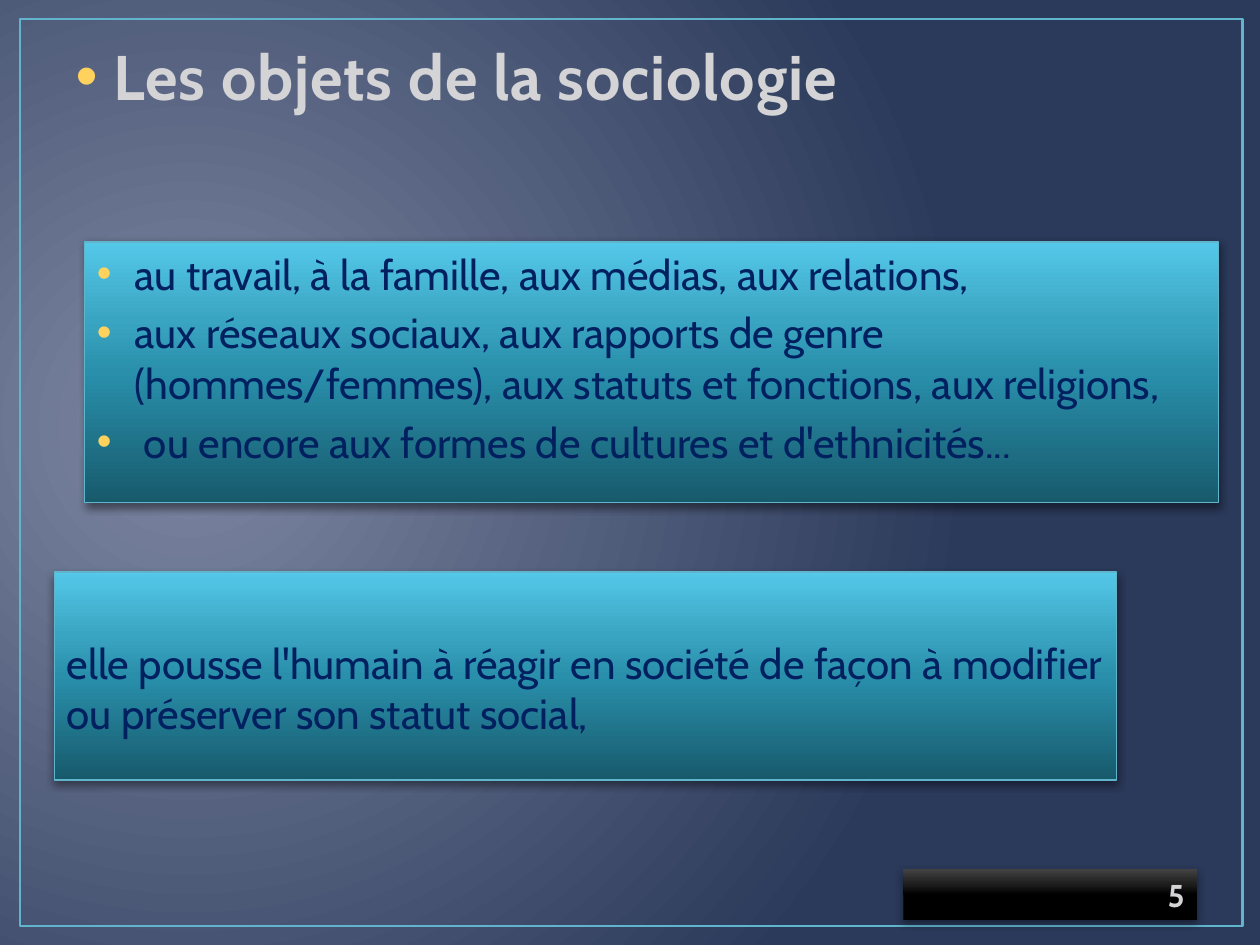
from lxml.etree import SubElement
from pptx import Presentation
from pptx.dml.color import RGBColor
from pptx.enum.shapes import MSO_SHAPE
from pptx.enum.text import MSO_ANCHOR, MSO_AUTO_SIZE, PP_ALIGN
from pptx.oxml.ns import qn
from pptx.util import Inches, Pt

NAVY, PALE, YELLOW, EDGE = "002060", "D4D4D6", "FFD25D", "60B5CC"
TEAL_STOPS = [(0, "175A6C"), (50, "298FAB"), (70, "3AA5C2"), (100, "54C8E9")]
BLACK_STOPS = [(0, "000000"), (50, "000000"), (70, "1D1D1D"), (100, "424242")]


def set_stops(gradient, stops):
    stop_list = gradient.find(qn("a:gsLst"))
    for old in list(stop_list):
        stop_list.remove(old)
    for position, colour in stops:
        stop = SubElement(stop_list, qn("a:gs"), pos=str(position * 1000))
        SubElement(stop, qn("a:srgbClr"), val=colour)


def format_paragraph(paragraph, size, colour, bold=False, bullet=False):
    paragraph.line_spacing = 1.0
    paragraph.space_before = Pt(size * 0.2)
    for run in paragraph.runs:
        run.font.name = "Cabin"
        run.font.size = Pt(size)
        run.font.bold = bold
        run.font.color.rgb = RGBColor.from_string(colour)
    props = paragraph._p.get_or_add_pPr()
    indent = Inches(0.3) if bullet else 0
    props.set("marL", str(indent))
    props.set("indent", str(-indent))
    if bullet:
        bullet_colour = SubElement(props, qn("a:buClr"))
        SubElement(bullet_colour, qn("a:srgbClr"), val=YELLOW)
        SubElement(props, qn("a:buFont"), typeface="Arial")
        SubElement(props, qn("a:buChar"), char="•")
    else:
        SubElement(props, qn("a:buNone"))


deck = Presentation()
deck.slide_width, deck.slide_height = Inches(10), Inches(7.5)
COL, ROW = deck.slide_width / 100, deck.slide_height / 100
slide = deck.slides.add_slide(deck.slide_layouts[1])

# Background: a glow centred on the left
slide.background.fill.gradient()
glow = slide._element.find(".//" + qn("a:gradFill"))
set_stops(glow, [(0, "7E88A3"), (100, "2B395A")])
glow.remove(glow.find(qn("a:lin")))
circle = SubElement(glow, qn("a:path"), path="circle")
SubElement(circle, qn("a:fillToRect"), l="15000", t="50000", r="85000", b="60000")

# Parts and their places, in hundredths of the slide
title, conclusion = slide.shapes.title, slide.placeholders[1]
frame, topics, number = [
    slide.shapes.add_shape(MSO_SHAPE.RECTANGLE, 0, 0, 0, 0) for _ in range(3)
]
places = [
    (frame, 1.6, 2, 97, 96),
    (title, 5, 4, 90, 16.67),
    (conclusion, 4.3, 60.53, 84.3, 22),
    (topics, 6.7, 25.6, 90, 27.6),
    (number, 71.7, 92, 23.3, 5.33),
]
for part, left, top, width, height in places:
    part.left, part.top = round(left * COL), round(top * ROW)
    part.width, part.height = round(width * COL), round(height * ROW)
    part.text_frame.word_wrap = True
    part.text_frame.auto_size = MSO_AUTO_SIZE.NONE
    part.text_frame.vertical_anchor = MSO_ANCHOR.TOP

frame.fill.background()
frame.shadow.inherit = False
for part, weight in [(frame, 1.5), (conclusion, 0.75), (topics, 0.75)]:
    part.line.color.rgb = RGBColor.from_string(EDGE)
    part.line.width = Pt(weight)
number.line.fill.background()

for part, stops in [(conclusion, TEAL_STOPS), (topics, TEAL_STOPS), (number, BLACK_STOPS)]:
    part.fill.gradient()
    part.fill.gradient_angle = 90
    props = part._element.spPr
    set_stops(props.find(qn("a:gradFill")), stops)
    part.shadow.inherit = False
    shadow = SubElement(
        props.find(qn("a:effectLst")), qn("a:outerShdw"),
        blurRad=str(Pt(5)), dist=str(Pt(2)), dir="5400000", rotWithShape="0",
    )
    shade = SubElement(shadow, qn("a:srgbClr"), val="000000")
    SubElement(shade, qn("a:alpha"), val="43000")

# Wording
title.text_frame.text = "Les objets de la sociologie"
title.text_frame.margin_top = 0
heading = title.text_frame.paragraphs[0]
heading.alignment = PP_ALIGN.LEFT
format_paragraph(heading, 36, PALE, bold=True, bullet=True)
heading.runs[0].font._element.set("spc", "50")

topics.text_frame.text = "\n".join([
    "au travail, à la famille, aux médias, aux relations,",
    "aux réseaux sociaux, aux rapports de genre (hommes/femmes), "
    "aux statuts et fonctions, aux religions,",
    " ou encore aux formes de cultures et d'ethnicités...",
])
for topic in topics.text_frame.paragraphs:
    topic.alignment = PP_ALIGN.LEFT
    format_paragraph(topic, 24, NAVY, bullet=True)

conclusion.text_frame.text = (
    "elle pousse l'humain à réagir en société de façon à modifier "
    "ou préserver son statut social,"
)
conclusion.text_frame.margin_top = Inches(0.52)
format_paragraph(conclusion.text_frame.paragraphs[0], 24, NAVY)

number.text_frame.text = "5"
number.text_frame.vertical_anchor = MSO_ANCHOR.MIDDLE
page = number.text_frame.paragraphs[0]
page.alignment = PP_ALIGN.RIGHT
format_paragraph(page, 18, PALE, bold=True)
page.space_before = 0

deck.save("out.pptx")
